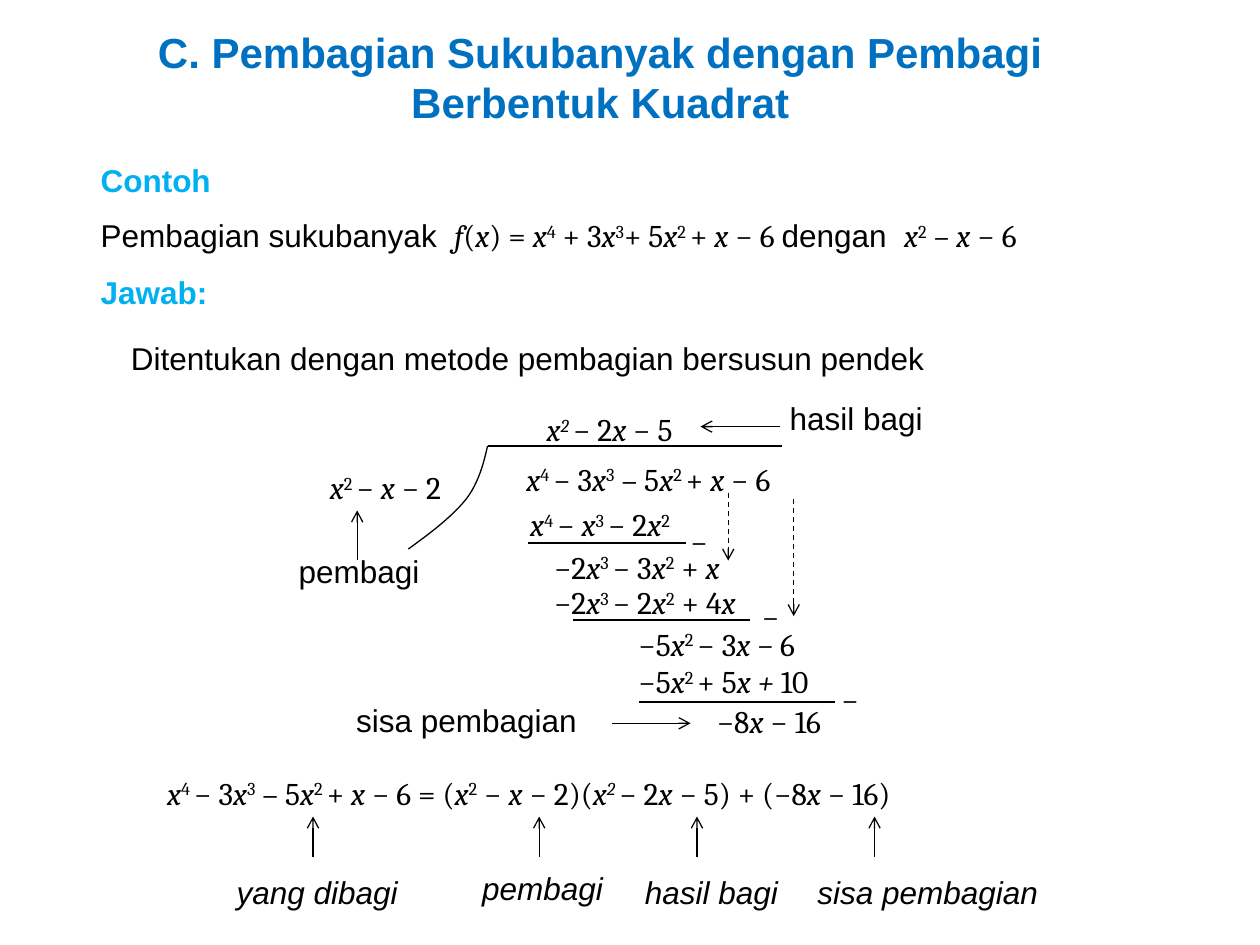
import itertools

import pptx
import pptx.dml.color
import pptx.enum.dml
import pptx.enum.shapes
import pptx.enum.text
import pptx.oxml
import pptx.oxml.ns
import pptx.util

Cm = pptx.util.Cm
COLORS = {"title": "0070C0", "heading": "00B0F0", "ink": "000000"}
ROW_H = 1.02


def rgb(name):
    """Return the named colour."""
    return pptx.dml.color.RGBColor.from_string(COLORS[name])


def add_run(p, text, color="ink", raised=False, **fmt):
    """Append a run with font attributes taken from fmt."""
    r = p.add_run()
    r.text = text
    for key, value in {"name": "Arial", "size": pptx.util.Pt(18), **fmt}.items():
        setattr(r.font, key, value)
    r.font.color.rgb = rgb(color)
    if raised:
        r._r.get_or_add_rPr().set("baseline", "30000")


def add_math(p, source):
    """Append math: ^ toggles superscript, * toggles italic, variables are italic."""
    raised = slanted = False
    marks = []
    for char in source:
        if char == "^":
            raised = not raised
        elif char == "*":
            slanted = not slanted
        else:
            marks.append((char, raised, slanted or char in "fx"))
    for (up, italic), group in itertools.groupby(marks, key=lambda m: m[1:]):
        text = "".join(m[0] for m in group)
        add_run(p, text, raised=up, name="Cambria", italic=italic)


def add_box(s, x, y, w, h=ROW_H, wrap=False):
    """Add a text box and return its first paragraph."""
    tf = s.shapes.add_textbox(Cm(x), Cm(y), Cm(w), Cm(h)).text_frame
    tf.word_wrap = wrap
    tf.auto_size = pptx.enum.text.MSO_AUTO_SIZE.SHAPE_TO_FIT_TEXT
    return tf.paragraphs[0]


def add_text(s, x, y, w, text, h=ROW_H, wrap=False, align=None, **fmt):
    """Add a box holding one plain run."""
    p = add_box(s, x, y, w, h, wrap)
    p.alignment = align
    add_run(p, text, **fmt)


def add_line(s, x1, y1, x2, y2, arrow=False, dashed=False):
    """Add a thin straight line, optionally dashed or with an arrowhead."""
    sp = s.shapes.add_connector(
        pptx.enum.shapes.MSO_CONNECTOR.STRAIGHT, Cm(x1), Cm(y1), Cm(x2), Cm(y2))
    sp.line.width = pptx.util.Pt(0.75)
    sp.line.color.rgb = rgb("ink")
    if dashed:
        sp.line.dash_style = pptx.enum.dml.MSO_LINE.DASH
    if arrow:
        tail = pptx.oxml.parse_xml(
            f'<a:tailEnd {pptx.oxml.ns.nsdecls("a")} type="arrow"/>')
        sp.line._get_or_add_ln().append(tail)
    sp._element.spPr.append(
        pptx.oxml.parse_xml(f'<a:effectLst {pptx.oxml.ns.nsdecls("a")}/>'))


def bezier(points, steps=12):
    """Return points along a cubic curve, without its start."""
    weights = (1, 3, 3, 1)
    ts = [i / steps for i in range(1, steps + 1)]
    return [tuple(Cm(sum(c * (1 - t) ** (3 - k) * t ** k * pt[axis]
                         for k, (c, pt) in enumerate(zip(weights, points))))
                  for axis in (0, 1)) for t in ts]


def add_division_curve(s):
    """Draw the curved left side of the division bracket."""
    upper = [(9.83, 8.99), (9.75, 9.35), (9.65, 9.73), (9.4, 10.06)]
    lower = [(9.4, 10.06), (9.12, 10.41), (8.69, 10.74), (8.23, 11.07)]
    fb = s.shapes.build_freeform(Cm(upper[0][0]), Cm(upper[0][1]))
    fb.add_line_segments(bezier(upper) + bezier(lower), close=False)
    sp = fb.convert_to_shape()
    sp.shadow.inherit = False
    sp.fill.background()
    sp.line.width = pptx.util.Pt(0.75)
    sp.line.color.rgb = rgb("ink")


def add_intro(s):
    """Add the title, headings and the problem statement."""
    add_text(s, 1.19, 0.41, 21.82, "C. Pembagian Sukubanyak dengan Pembagi Berbentuk Kuadrat",
             h=2.31, wrap=True, align=pptx.enum.text.PP_ALIGN.CENTER,
             color="title", bold=True, size=pptx.util.Pt(24))
    for y, text in ((3.12, "Contoh"), (5.38, "Jawab:")):
        add_text(s, 1.78, y, 3.18, text, wrap=True, color="heading", bold=True)
    p = add_box(s, 1.78, 4.24, 20.04, wrap=True)
    add_run(p, "Pembagian sukubanyak  ")
    add_math(p, "f(x) = x^4^ + 3x^3^+ 5x^2 ^+ x − 6 ")
    add_run(p, "dengan  ")
    add_math(p, "x^2^* – x* − 6")
    add_text(s, 2.39, 6.71, 20.04, "Ditentukan dengan metode pembagian bersusun pendek", wrap=True)


def add_division(s):
    """Add the long division with its rules, arrows and labels."""
    terms = [
        (10.77, 8.15, 3.45, "x*^2 ^*− 2x − 5"),
        (10.36, 9.14, 6.2, "x^4 ^− 3x^3^ – 5x^2 ^+ x − 6"),
        (6.4, 9.32, 3.07, "x^2 ^− x − 2"),
        (10.44, 10.06, 3.68, "x^4 ^− x^3 ^− 2x^2^"),
        (10.92, 10.92, 4.24, "−2x^3 ^− 3x^2^ + x"),
        (10.92, 11.63, 4.47, "−2x^3 ^− 2x^2^ + 4x"),
        (12.62, 12.47, 3.96, "−5x^2 ^− 3*x − *6"),
        (12.62, 13.23, 4.37, "−5x^2 ^+ 5*x + *10"),
        (14.2, 14.02, 2.79, "−8*x *− 16"),
    ]
    minus_signs = [(13.67, 10.39), (15.11, 11.91), (16.71, 13.59)]
    for x, y, w, source in terms + [(x, y, 0.86, "−") for x, y in minus_signs]:
        add_math(add_box(s, x, y, w), source)
    rules = [(9.83, 8.99, 15.77), (10.64, 10.95, 13.82),
             (11.56, 12.5, 15.11), (12.88, 14.15, 16.84)]
    for x1, y, x2 in rules:
        add_line(s, x1, y, x2, y)
    add_division_curve(s)
    for ends in ((12.34, 14.58, 13.92, 14.58), (15.72, 8.6, 14.12, 8.6),
                 (7.2, 11.28, 7.2, 10.29)):
        add_line(s, *ends, arrow=True)
    for x, y1, y2 in ((16, 10.06, 12.42), (14.68, 9.93, 11.3)):
        add_line(s, x, y1, x, y2, arrow=True, dashed=True)
    for label in ((6.93, 14, 5, "sisa pembagian"), (5.77, 11, 2.97, "pembagi"),
                  (15.67, 7.92, 3.23, "hasil bagi")):
        add_text(s, *label)


def add_result(s):
    """Add the final identity with an arrow and a name for each part."""
    add_math(add_box(s, 3.12, 15.47, 16.08, wrap=True),
             "x^4 ^− 3x^3^ – 5x^2 ^+ x − 6 = (x^2^ − x − 2)(x*^2 ^*− 2x − 5) + (−8x − 16)")
    parts = [(6.31, 4.52, 17.48, 3.78, "yang dibagi"), (10.87, 9.47, 17.4, 2.97, "pembagi"),
             (14.05, 12.75, 17.48, 3.23, "hasil bagi"), (17.63, 16.23, 17.48, 5, "sisa pembagian")]
    for arrow_x, x, y, w, name in parts:
        add_line(s, arrow_x, 17.27, arrow_x, 16.46, arrow=True)
        add_text(s, x, y, w, name, italic=True)


def main():
    """Build and save the slide."""
    prs = pptx.Presentation()
    prs.slide_width, prs.slide_height = Cm(25.4), Cm(19.05)
    s = prs.slides.add_slide(prs.slide_layouts[6])
    add_intro(s)
    add_division(s)
    add_result(s)
    prs.save("out.pptx")


if __name__ == "__main__":
    main()
